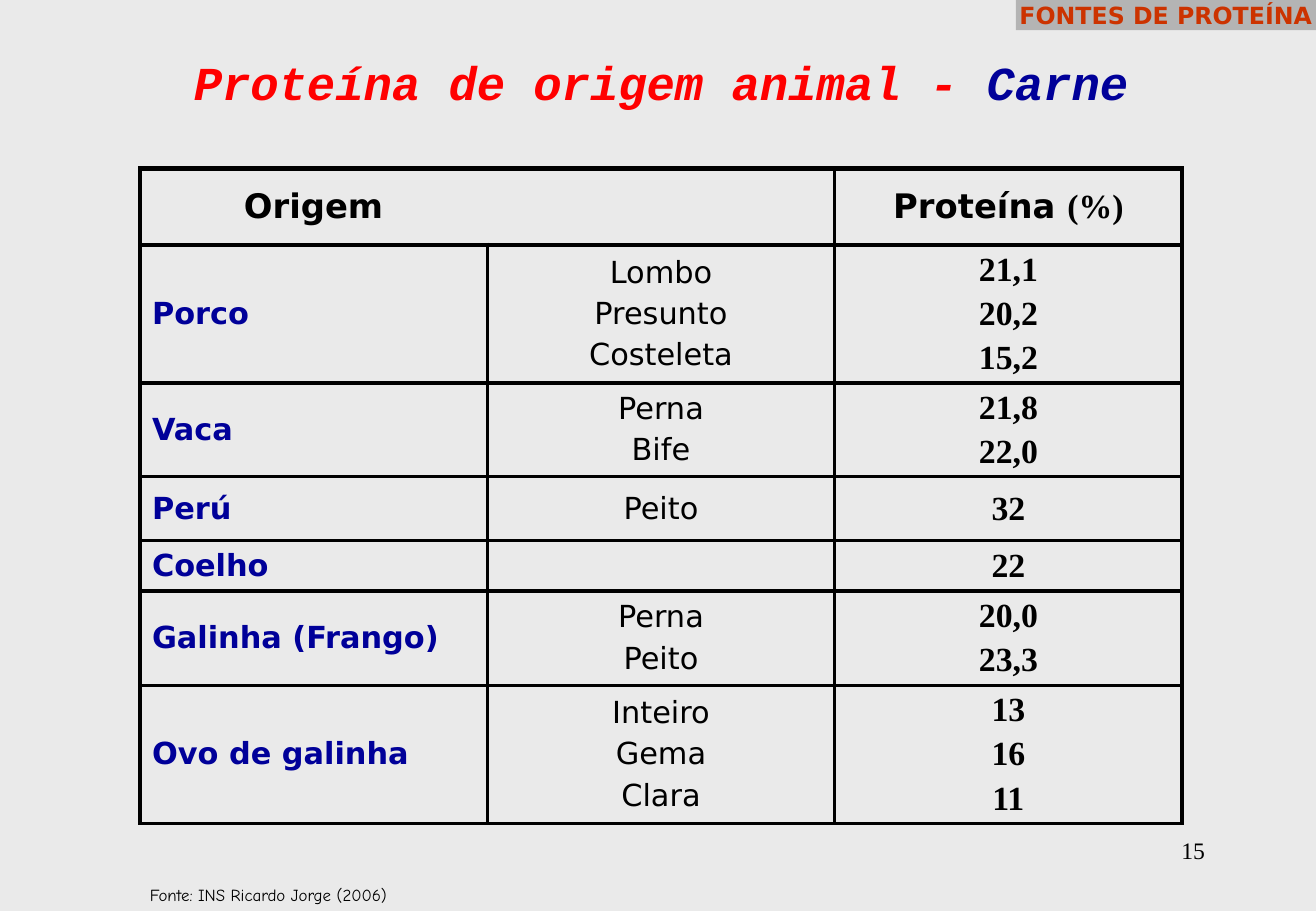
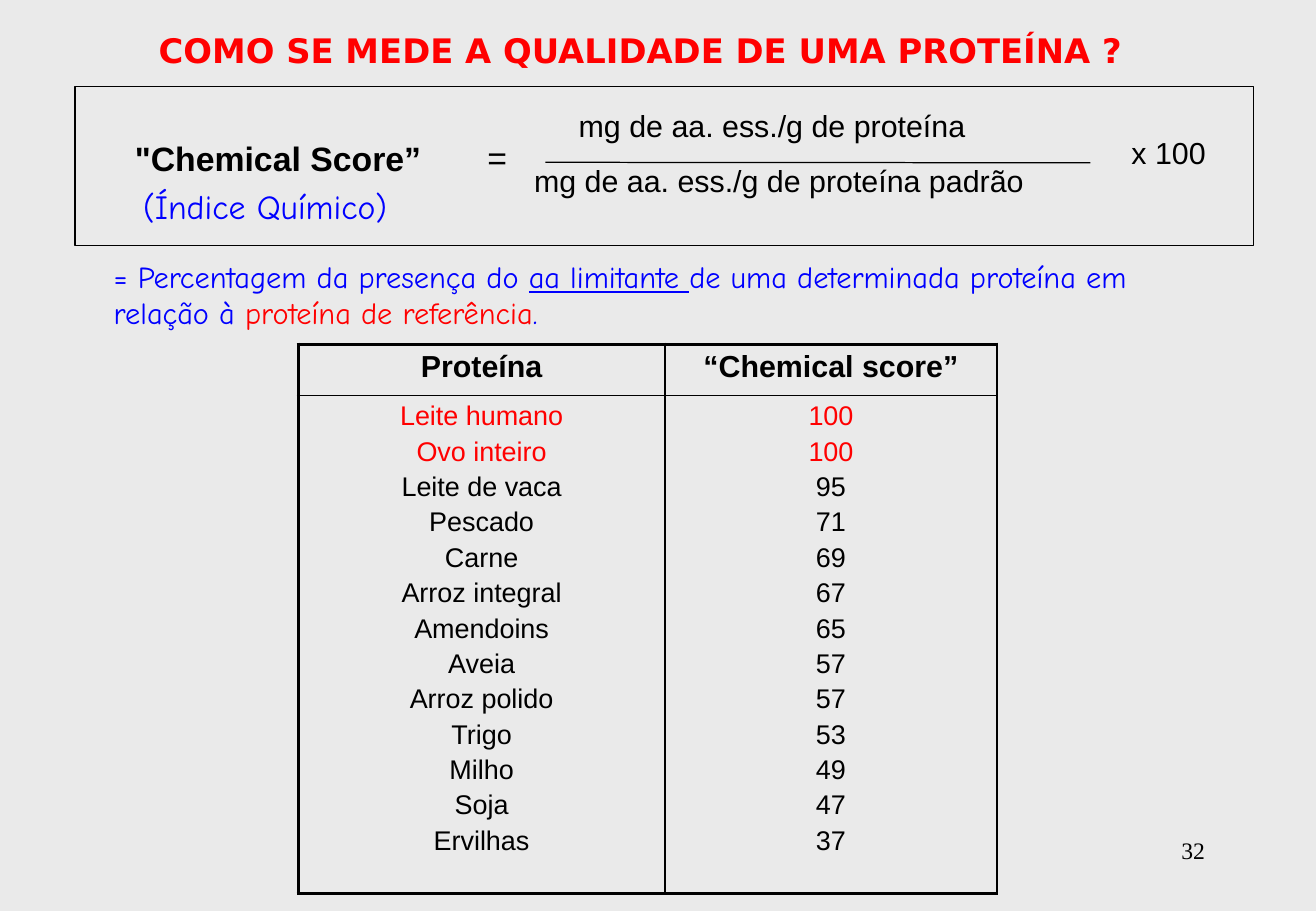
from dataclasses import dataclass

from lxml.etree import SubElement
from pptx import Presentation
from pptx.dml.color import RGBColor as RGB
from pptx.enum.shapes import MSO_CONNECTOR as Connector, MSO_SHAPE as Shape
from pptx.enum.text import MSO_ANCHOR as Anchor, MSO_AUTO_SIZE as AutoSize, PP_ALIGN as Align
from pptx.oxml import parse_xml
from pptx.oxml.ns import nsdecls, qn
from pptx.util import Inches, Pt


@dataclass(frozen=True)
class Theme:
    paper: RGB = RGB.from_string("EAEAEA")
    ink: RGB = RGB.from_string("000000")
    red: RGB = RGB.from_string("FF0000")
    navy: RGB = RGB.from_string("000099")
    blue: RGB = RGB.from_string("0000FF")
    rust: RGB = RGB.from_string("CC3300")
    grey: RGB = RGB.from_string("808080")
    sans: str = "DejaVu Sans"
    serif: str = "Times New Roman"
    plain: str = "Arial"
    hand: str = "Comic Neue"
    mono: str = "Courier New"
    title: Pt = Pt(28)
    large: Pt = Pt(20)
    body: Pt = Pt(18)
    list: Pt = Pt(16)
    small: Pt = Pt(14)
    note: Pt = Pt(10)
    gap: float = 0.2


T = Theme()
title_red = dict(name=T.mono, size=T.title, color=T.red, bold=True, italic=True)
title_navy = title_red | dict(color=T.navy)
question = dict(name=T.sans, size=T.large, color=T.red, bold=True)
section = dict(name=T.sans, size=T.small, color=T.rust, bold=True)
page = dict(name=T.serif, size=T.small, color=T.ink)
source = dict(name=T.hand, size=T.note, color=T.ink)
head = dict(name=T.sans, size=T.large, color=T.ink, bold=True)
value = head | dict(name=T.serif)
animal = dict(name=T.sans, size=T.body, color=T.navy, bold=True)
cut = dict(name=T.sans, size=T.body, color=T.ink)
term = dict(name=T.plain, size=T.large, color=T.ink)
term_bold = term | dict(bold=True)
fraction = term | dict(size=T.body)
score_head = fraction | dict(bold=True)
score = term | dict(size=T.list)
score_top = score | dict(color=T.red)
definition = dict(name=T.hand, size=T.body, color=T.blue)
limiting = definition | dict(underline=True)
reference = definition | dict(color=T.red)
translation = definition | dict(size=T.large)

deck = Presentation()
deck.slide_width, deck.slide_height = Inches(10.83), Inches(7.5)
X, Y = deck.slide_width / 100, deck.slide_height / 100
backdrop = deck.slide_master.background.fill
backdrop.solid()
backdrop.fore_color.rgb = T.paper


def area(left, top, width, height):
    return [round(share * unit) for share, unit in zip((left, top, width, height), (X, Y, X, Y))]


def write(frame, paragraphs, align=Align.LEFT, anchor=Anchor.TOP, wrap=True):
    frame.word_wrap, frame.vertical_anchor = wrap, anchor
    for index, runs in enumerate(paragraphs):
        paragraph = frame.add_paragraph() if index else frame.paragraphs[0]
        paragraph.alignment = align
        if index:
            paragraph.space_before = Pt(round(runs[0][1]["size"].pt * T.gap, 1))
        for words, style in runs:
            run = paragraph.add_run()
            run.text = words
            for key, setting in style.items():
                if key == "color":
                    run.font.color.rgb = setting
                else:
                    setattr(run.font, key, setting)


meats = [
    ("Porco", ["Lombo", "Presunto", "Costeleta"], ["21,1", "20,2", "15,2"]),
    ("Vaca", ["Perna", "Bife"], ["21,8", "22,0"]),
    ("Perú", ["Peito"], ["32"]),
    ("Coelho", [], ["22"]),
    ("Galinha (Frango)", ["Perna", "Peito"], ["20,0", "23,3"]),
    ("Ovo de galinha", ["Inteiro", "Gema", "Clara"], ["13", "16", "11"]),
]
scores = [
    ("Leite humano", 100), ("Ovo inteiro", 100), ("Leite de vaca", 95), ("Pescado", 71),
    ("Carne", 69), ("Arroz integral", 67), ("Amendoins", 65), ("Aveia", 57),
    ("Arroz polido", 57), ("Trigo", 53), ("Milho", 49), ("Soja", 47), ("Ervilhas", 37),
]
meat_rows = [[[[("Origem", head)]], [], [[("Proteína ", head), ("(%)", value)]]]]
for name, cuts, percents in meats:
    meat_rows.append([
        [[(name, animal)]],
        [[(part, cut)] for part in cuts],
        [[(percent, value)] for percent in percents],
    ])
score_rows = [
    [[[("Proteína", score_head)]], [[("“Chemical score”", score_head)]]],
    [[[(str(entry[column]), score_top if entry[1] == 100 else score)] for entry in scores]
     for column in range(2)],
]

pages = [
    dict(number="15", title=[("Proteína de origem animal - ", title_red), ("Carne", title_navy)],
         title_area=(11.91, 6, 76.64, 5.87), title_align=Align.CENTER,
         rows=meat_rows, left=10.63, top=18.48, widths=[26.4] * 3,
         heights=[8.4, 15.15, 10.3, 7, 5.55, 10.35, 15.2],
         anchor=Anchor.MIDDLE, margin=Pt(0.5),
         uprights=[2.25] * 4, levels=[3, 3] + [2.25] * 6, open_edges={(0, 1)}),
    dict(number="32", title=[("COMO SE MEDE A QUALIDADE DE UMA PROTEÍNA ?", question)],
         title_area=(11.13, 2.56, 76.27, 5.87), title_align=Align.LEFT,
         rows=score_rows, left=22.66, top=37.8, widths=[27.88, 25.21],
         heights=[5.6, 54.67], anchor=Anchor.TOP, margin=Inches(0.05),
         uprights=[2.25, 1.5, 1], levels=[2.25, 1, 2.25], open_edges=set()),
]

slides = []
for content in pages:
    slide = deck.slides.add_slide(deck.slide_layouts[5])
    slides.append(slide)
    title = slide.shapes.title
    title.left, title.top, title.width, title.height = area(*content["title_area"])
    write(title.text_frame, [content["title"]], content["title_align"], Anchor.MIDDLE)
    title.text_frame.auto_size = AutoSize.NONE
    number = slide.shapes.add_textbox(*area(71.6, 91.07, 20.87, 6.67))
    write(number.text_frame, [[(content["number"], page)]], Align.RIGHT)

    rows, widths, heights = content["rows"], content["widths"], content["heights"]
    table = slide.shapes.add_table(
        len(rows), len(widths),
        *area(content["left"], content["top"], sum(widths), sum(heights))).table
    table.first_row = table.horz_banding = False
    for column, width in zip(table.columns, widths):
        column.width = round(width * X)
    for row, height in zip(table.rows, heights):
        row.height = round(height * Y)
    for r, row in enumerate(rows):
        for c, paragraphs in enumerate(row):
            cell = table.cell(r, c)
            cell.fill.background()
            align = Align.LEFT if paragraphs and paragraphs[0][0][1] is animal else Align.CENTER
            write(cell.text_frame, paragraphs, align)
            cell.vertical_anchor = content["anchor"]
            cell.margin_top = cell.margin_bottom = content["margin"]
            edges = dict(L=content["uprights"][c], R=content["uprights"][c + 1],
                         T=content["levels"][r], B=content["levels"][r + 1])
            for position, (side, weight) in enumerate(edges.items()):
                boundary = {"L": c, "R": c + 1}.get(side)
                paint = ("<a:noFill/>" if (r, boundary) in content["open_edges"] else
                         f'<a:solidFill><a:srgbClr val="{T.ink}"/></a:solidFill>')
                cell._tc.get_or_add_tcPr().insert(position, parse_xml(
                    f'<a:ln{side} {nsdecls("a")} w="{Pt(weight)}">{paint}</a:ln{side}>'))

meat_slide, score_slide = slides

origin = meat_slide.shapes.add_textbox(*area(10.48, 96.4, 21.98, 3.6))
write(origin.text_frame, [[("Fonte: INS Ricardo Jorge (2006)", source)]])
tag = meat_slide.shapes.add_shape(Shape.RECTANGLE, *area(77.19, 0, 22.81, 3.33))
tag.shadow.inherit = False
tag.fill.solid()
tag.fill.fore_color.rgb = T.grey
SubElement(tag._element.spPr.find(".//" + qn("a:srgbClr")), qn("a:alpha"), val="50000")
tag.line.fill.background()
write(tag.text_frame, [[("FONTES DE PROTEÍNA", section)]], Align.CENTER, Anchor.MIDDLE, False)

meaning = score_slide.shapes.add_textbox(*area(7.73, 27.67, 85.41, 9.47))
write(meaning.text_frame, [[
    ("= Percentagem da presença do ", definition),
    ("aa limitante ", limiting),
    ("de uma determinada proteína em relação à ", definition),
    ("proteína de referência", reference),
    (".", definition),
]])

formula = score_slide.shapes.add_group_shape().shapes
border = formula.add_shape(Shape.RECTANGLE, *area(5.7, 9.52, 89.53, 17.43))
border.shadow.inherit = False
border.fill.background()
fraction_bar = formula.add_connector(
    Connector.STRAIGHT, *[round(share * unit) for share, unit in
                          zip((41.44, 17.82, 82.85, 17.87), (X, Y, X, Y))])
SubElement(fraction_bar._element.spPr, qn("a:effectLst"))
for stroke in (border, fraction_bar):
    stroke.line.color.rgb = T.ink
    stroke.line.width = Pt(0.75)
for words, style, place, align in [
    ("\"Chemical Score”", term_bold, (9.33, 14.45, 25.67, 5.73), Align.LEFT),
    ("=", term, (36.14, 14.4, 3.6, 5.73), Align.LEFT),
    ("mg de aa. ess./g de proteína", fraction, (43.07, 11.1, 33, 5.33), Align.LEFT),
    ("mg de aa. ess./g de proteína padrão", fraction, (39.68, 17.1, 41, 5.33), Align.LEFT),
    ("(Índice Químico)", translation, (9.97, 19.73, 27.89, 5.73), Align.LEFT),
    ("x 100", fraction, (83.77, 14.1, 10.06, 5.33), Align.CENTER),
]:
    write(formula.add_textbox(*area(*place)).text_frame, [[(words, style)]], align)

deck.save("out.pptx")
